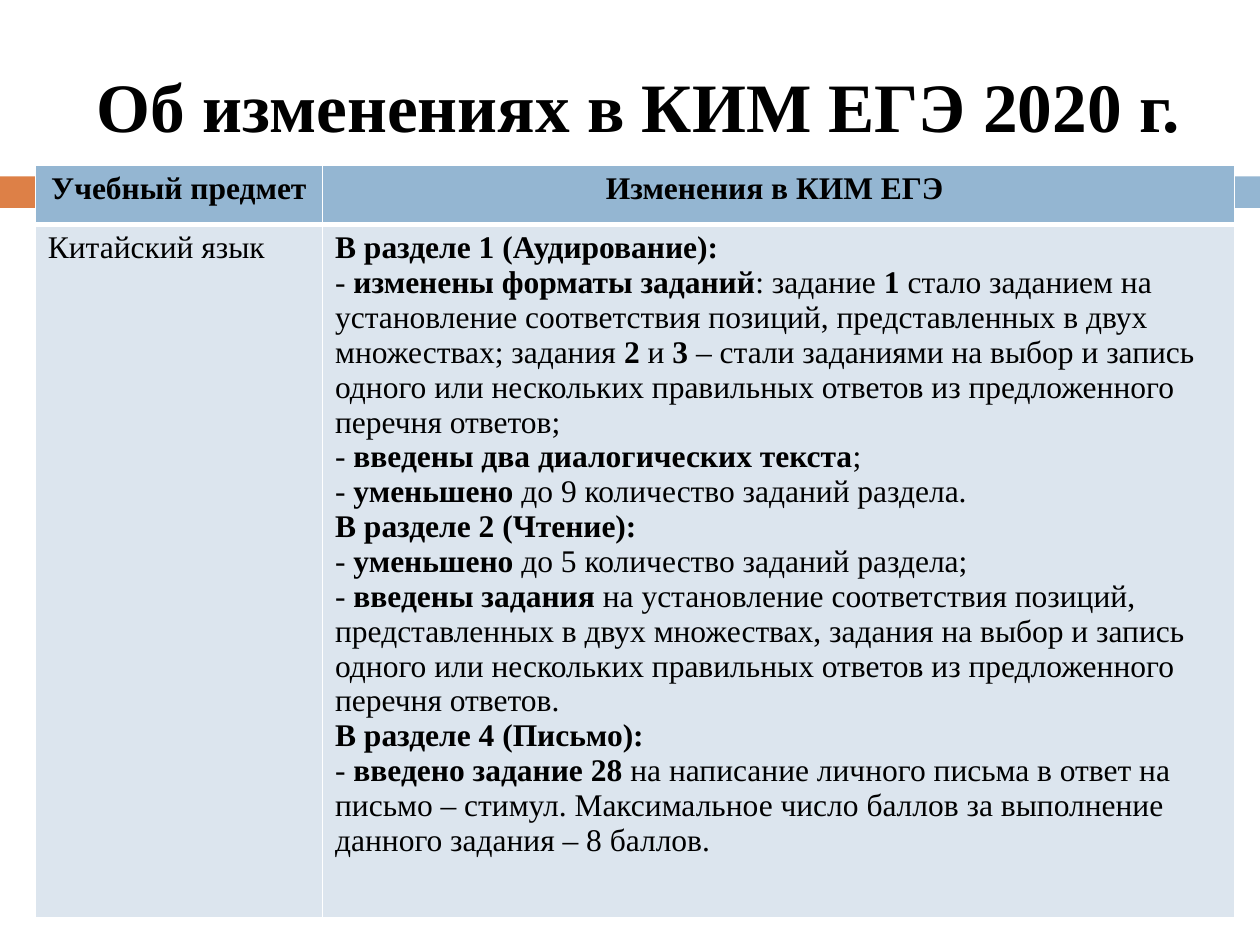
from dataclasses import dataclass

from lxml import etree
from pptx import Presentation
from pptx.dml.color import RGBColor
from pptx.enum.shapes import MSO_SHAPE
from pptx.enum.text import MSO_ANCHOR, PP_ALIGN
from pptx.oxml.ns import qn
from pptx.util import Inches, Pt

RECTANGLE = MSO_SHAPE.RECTANGLE
MIDDLE = MSO_ANCHOR.MIDDLE
LEFT, CENTER = PP_ALIGN.LEFT, PP_ALIGN.CENTER


@dataclass(frozen=True)
class Theme:
    font: str = "Times New Roman"
    title_size: float = 39.6
    body_size: float = 18
    text: str = "000000"
    orange: str = "DD8047"
    blue: str = "94B6D2"
    pale_blue: str = "DCE5EE"
    border: str = "FFFFFF"


THEME = Theme()

TITLE = "*Об изменениях в КИМ ЕГЭ 2020 г.*"
HEADERS = ["*Учебный предмет*", "*Изменения в КИМ ЕГЭ *"]
SUBJECT = "Китайский язык"
CHANGES = [
    "*В разделе 1 (Аудирование):*",
    "- *изменены форматы заданий*: задание *1* стало заданием на установление "
    "соответствия позиций, представленных в двух множествах; задания *2* и *3* – стали "
    "заданиями на выбор и запись одного или нескольких правильных ответов из "
    "предложенного перечня ответов;",
    "- *введены два диалогических текста*;",
    "- *уменьшено *до 9 количество заданий раздела.",
    "*В разделе 2 (Чтение):*",
    "- *уменьшено* до 5 количество заданий раздела;",
    "- *введены задания *на установление соответствия позиций, представленных в двух "
    "множествах, задания на выбор и запись одного или нескольких правильных ответов из "
    "предложенного перечня ответов.",
    "*В разделе 4 (Письмо):*",
    "- *введено задание 28 *на написание личного письма в ответ на письмо – стимул. "
    "Максимальное число баллов за выполнение данного задания – 8 баллов.",
]


def write_paragraphs(text_frame, lines, size, alignment=LEFT):
    """Write one paragraph per line; text between asterisks is bold."""
    for index, line in enumerate(lines):
        paragraph = text_frame.add_paragraph() if index else text_frame.paragraphs[0]
        paragraph.alignment = alignment
        for part, text in enumerate(line.split("*")):
            if text:
                run = paragraph.add_run()
                run.text = text
                run.font.name = THEME.font
                run.font.size = Pt(size)
                run.font.bold = part % 2 == 1
                run.font.color.rgb = RGBColor.from_string(THEME.text)


def add_band(slide, left, width, color):
    shape = slide.shapes.add_shape(
        RECTANGLE, Inches(left), Inches(1.4), Inches(width), Inches(0.25))
    shape.shadow.inherit = False
    shape.fill.solid()
    shape.fill.fore_color.rgb = RGBColor.from_string(color)
    shape.line.fill.background()


def add_title(slide):
    box = slide.shapes.add_textbox(Inches(0.67), Inches(0.25), Inches(8.92), Inches(1.08))
    text_frame = box.text_frame
    text_frame.word_wrap = True
    text_frame.vertical_anchor = MIDDLE
    text_frame.margin_top = Inches(0.13)
    write_paragraphs(text_frame, [TITLE], THEME.title_size)


def set_borders(cell, bottom_width):
    properties = cell._tc.get_or_add_tcPr()
    widths = {"a:lnL": 1, "a:lnR": 1, "a:lnT": 1, "a:lnB": bottom_width}
    for index, (tag, width) in enumerate(widths.items()):
        line = etree.Element(qn(tag), w=str(Pt(width)))
        fill = etree.SubElement(line, qn("a:solidFill"))
        etree.SubElement(fill, qn("a:srgbClr"), val=THEME.border)
        properties.insert(index, line)


def fill_cell(cell, lines, color, alignment=LEFT, bottom_width=1):
    cell.fill.solid()
    cell.fill.fore_color.rgb = RGBColor.from_string(color)
    set_borders(cell, bottom_width)
    write_paragraphs(cell.text_frame, lines, THEME.body_size, alignment)


def add_changes_table(slide):
    widths, heights = [2.28, 7.24], [0.47, 5.08]
    table = slide.shapes.add_table(
        2, 2, Inches(0.28), Inches(1.31), Inches(sum(widths)), Inches(sum(heights))).table
    for column, width in zip(table.columns, widths):
        column.width = Inches(width)
    for row, height in zip(table.rows, heights):
        row.height = Inches(height)
    for index, (header, body) in enumerate(zip(HEADERS, [[SUBJECT], CHANGES])):
        header_cell = table.cell(0, index)
        header_cell.margin_left = header_cell.margin_right = Inches(0.11)
        fill_cell(header_cell, [header], THEME.blue, CENTER, bottom_width=3)
        fill_cell(table.cell(1, index), body, THEME.pale_blue)


def main():
    presentation = Presentation()
    presentation.slide_width = Inches(10)
    presentation.slide_height = Inches(7.5)
    slide = presentation.slides.add_slide(presentation.slide_layouts[6])
    add_band(slide, 0, 0.58, THEME.orange)
    add_band(slide, 0.65, 9.35, THEME.blue)
    add_title(slide)
    add_changes_table(slide)
    presentation.save("out.pptx")


if __name__ == "__main__":
    main()
